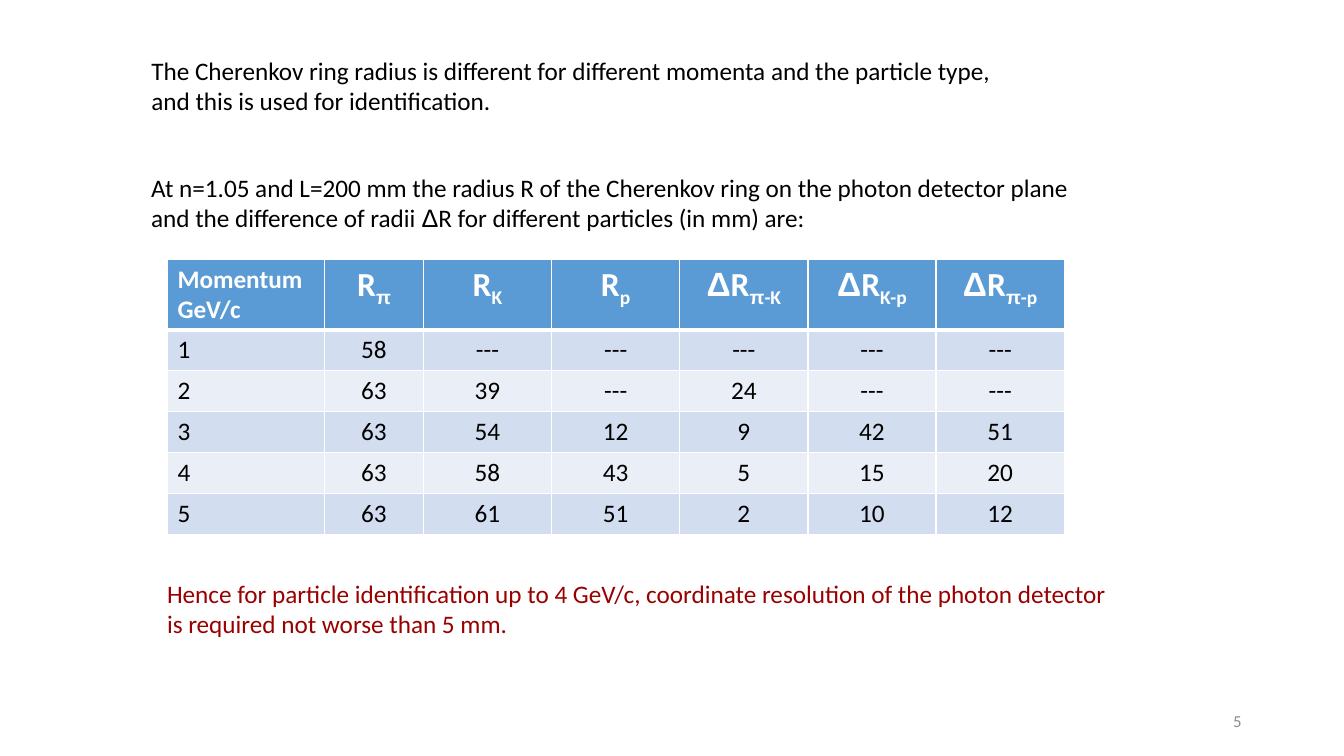
from dataclasses import dataclass
from itertools import groupby

from lxml.etree import SubElement
from pptx import Presentation
from pptx.dml.color import RGBColor
from pptx.enum.text import MSO_ANCHOR, MSO_AUTO_SIZE, PP_ALIGN
from pptx.oxml.ns import qn
from pptx.slide import Slide
from pptx.table import _Cell
from pptx.text.text import TextFrame
from pptx.util import Cm, Pt


@dataclass(frozen=True)
class Theme:
    font: str = "Calibri"
    greek_font: str = "Arial"
    ink: str = "000000"
    conclusion: str = "990000"
    muted: str = "8C8C8C"
    white: str = "FFFFFF"
    header: str = "5B9BD5"
    bands: tuple[str, str] = ("D2DEEF", "EAEFF7")
    body_size: int = 18
    symbol_size: int = 24
    number_size: int = 12
    rule: int = 1
    header_rule: int = 3


@dataclass(frozen=True)
class Box:
    left: float
    top: float
    width: float
    height: float

    def lengths(self) -> tuple[Cm, Cm, Cm, Cm]:
        return Cm(self.left), Cm(self.top), Cm(self.width), Cm(self.height)


@dataclass(frozen=True)
class Statement:
    box: Box
    lines: tuple[str, ...]
    color: str


@dataclass(frozen=True)
class Heading:
    lines: tuple[str, ...]
    subscript: str = ""


THEME = Theme()

LEAD = Statement(Box(3.56, 1.27, 21.95, 1.8), (
    "The Cherenkov ring radius is different for different momenta and the particle type,",
    "and this is used for identification.",
), THEME.ink)
CONDITIONS = Statement(Box(3.56, 4.22, 23.93, 1.8), (
    "At n=1.05 and L=200 mm the radius R of the Cherenkov ring on the photon detector plane",
    "and the difference of radii ΔR for different particles (in mm) are:",
), THEME.ink)
CONCLUSION = Statement(Box(3.96, 14.45, 24.94, 1.8), (
    "Hence for particle identification up to 4 GeV/c, coordinate resolution of the photon detector",
    "is required not worse than 5 mm.",
), THEME.conclusion)

HEADINGS = (
    Heading(("Momentum", "GeV/c")),
    Heading(("R",), "π"), Heading(("R",), "K"), Heading(("R",), "p"),
    Heading(("ΔR",), "π-K"), Heading(("ΔR",), "K-p"), Heading(("ΔR",), "π-p"),
)
NO_RING = "---"
RADII = (
    (1, 58, NO_RING, NO_RING, NO_RING, NO_RING, NO_RING),
    (2, 63, 39, NO_RING, 24, NO_RING, NO_RING),
    (3, 63, 54, 12, 9, 42, 51),
    (4, 63, 58, 43, 5, 15, 20),
    (5, 63, 61, 51, 2, 10, 12),
)
COLUMN_WIDTHS = (3.96, 2.49) + (3.23,) * 5
HEADER_HEIGHT, ROW_HEIGHT = 1.78, 1.03


def is_greek(letter: str) -> bool:
    return letter in "Δπ"


def write(frame: TextFrame, lines: tuple[str, ...], *, subscript: str = "",
          size: int = THEME.body_size, color: str = THEME.ink, bold: bool = False,
          align: PP_ALIGN = PP_ALIGN.LEFT) -> None:
    """Fill a frame, one paragraph per line; the subscript ends the last line."""
    for index, line in enumerate(lines):
        paragraph = frame.paragraphs[0] if index == 0 else frame.add_paragraph()
        paragraph.alignment = align
        tail = subscript if index == len(lines) - 1 else ""
        for part, lowered in ((line, False), (tail, True)):
            for greek, letters in groupby(part, is_greek):
                run = paragraph.add_run()
                run.text = "".join(letters)
                run.font.name = THEME.greek_font if greek else THEME.font
                run.font.size = Pt(size)
                run.font.bold = bold
                run.font.color.rgb = RGBColor.from_string(color)
                if lowered:
                    run._r.get_or_add_rPr().set("baseline", "-25000")


def add_statement(slide: Slide, statement: Statement) -> None:
    frame = slide.shapes.add_textbox(*statement.box.lengths()).text_frame
    frame.word_wrap = False
    frame.auto_size = MSO_AUTO_SIZE.SHAPE_TO_FIT_TEXT
    write(frame, statement.lines, color=statement.color)


def add_lead(slide: Slide, statement: Statement) -> None:
    lead = slide.shapes.title
    lead.left, lead.top, lead.width, lead.height = statement.box.lengths()
    frame = lead.text_frame
    frame.word_wrap = False
    frame.auto_size = MSO_AUTO_SIZE.SHAPE_TO_FIT_TEXT
    frame.vertical_anchor = MSO_ANCHOR.TOP
    write(frame, statement.lines, color=statement.color)


def style_cell(cell: _Cell, fill: str, top: int, bottom: int) -> None:
    properties = cell._tc.get_or_add_tcPr()
    edges = {"lnL": THEME.rule, "lnR": THEME.rule, "lnT": top, "lnB": bottom}
    for edge, width in edges.items():
        line = SubElement(properties, qn(f"a:{edge}"), w=str(Pt(width)))
        SubElement(SubElement(line, qn("a:solidFill")), qn("a:srgbClr"), val=THEME.white)
    cell.fill.solid()
    cell.fill.fore_color.rgb = RGBColor.from_string(fill)


def add_radius_table(slide: Slide) -> None:
    box = Box(4.22, 6.53, sum(COLUMN_WIDTHS), HEADER_HEIGHT + ROW_HEIGHT * len(RADII))
    table = slide.shapes.add_table(len(RADII) + 1, len(HEADINGS), *box.lengths()).table
    for column, width in zip(table.columns, COLUMN_WIDTHS):
        column.width = Cm(width)
    for index, row in enumerate(table.rows):
        row.height = Cm(ROW_HEIGHT if index else HEADER_HEIGHT)

    # Header row
    for column, heading in enumerate(HEADINGS):
        cell = table.cell(0, column)
        style_cell(cell, THEME.header, THEME.rule, THEME.header_rule)
        write(cell.text_frame, heading.lines, subscript=heading.subscript,
              size=THEME.symbol_size if column else THEME.body_size,
              color=THEME.white, bold=True,
              align=PP_ALIGN.CENTER if column else PP_ALIGN.LEFT)

    # Radii for each momentum
    for row, radii in enumerate(RADII, start=1):
        for column, radius in enumerate(radii):
            cell = table.cell(row, column)
            style_cell(cell, THEME.bands[(row - 1) % 2],
                       THEME.header_rule if row == 1 else THEME.rule, THEME.rule)
            write(cell.text_frame, (str(radius),),
                  align=PP_ALIGN.CENTER if column else PP_ALIGN.LEFT)


def add_page_number(slide: Slide, number: int) -> None:
    frame = slide.shapes.add_textbox(*Box(23.92, 17.66, 7.62, 1.01).lengths()).text_frame
    frame.word_wrap = True
    frame.vertical_anchor = MSO_ANCHOR.MIDDLE
    write(frame, (str(number),), size=THEME.number_size, color=THEME.muted,
          align=PP_ALIGN.RIGHT)


def main() -> None:
    presentation = Presentation()
    presentation.slide_width, presentation.slide_height = Cm(33.87), Cm(19.05)
    title_only = presentation.slide_layouts[5]
    slide = presentation.slides.add_slide(title_only)

    add_lead(slide, LEAD)
    add_statement(slide, CONDITIONS)
    add_radius_table(slide)
    add_statement(slide, CONCLUSION)
    add_page_number(slide, 5)
    presentation.save("out.pptx")


if __name__ == "__main__":
    main()
